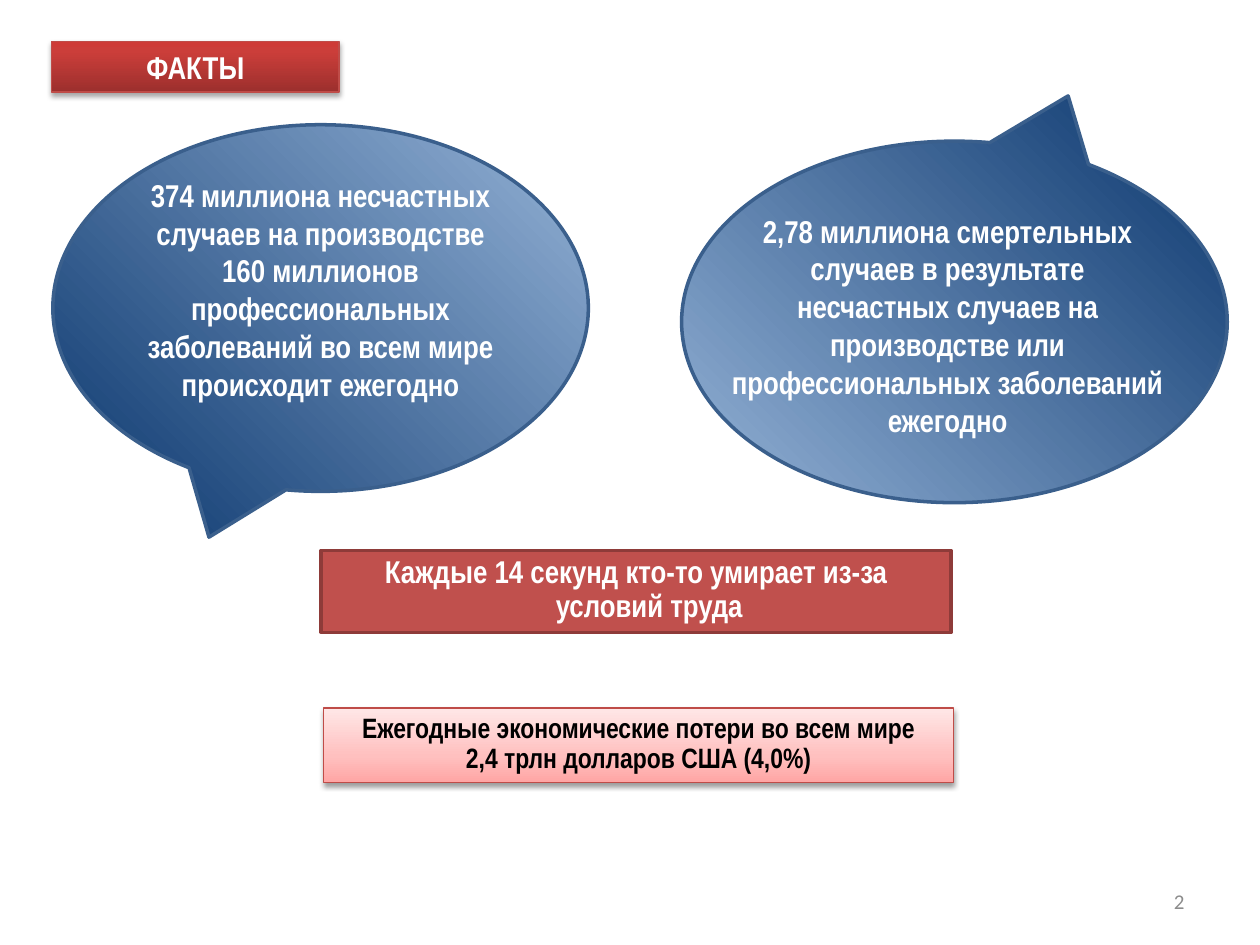
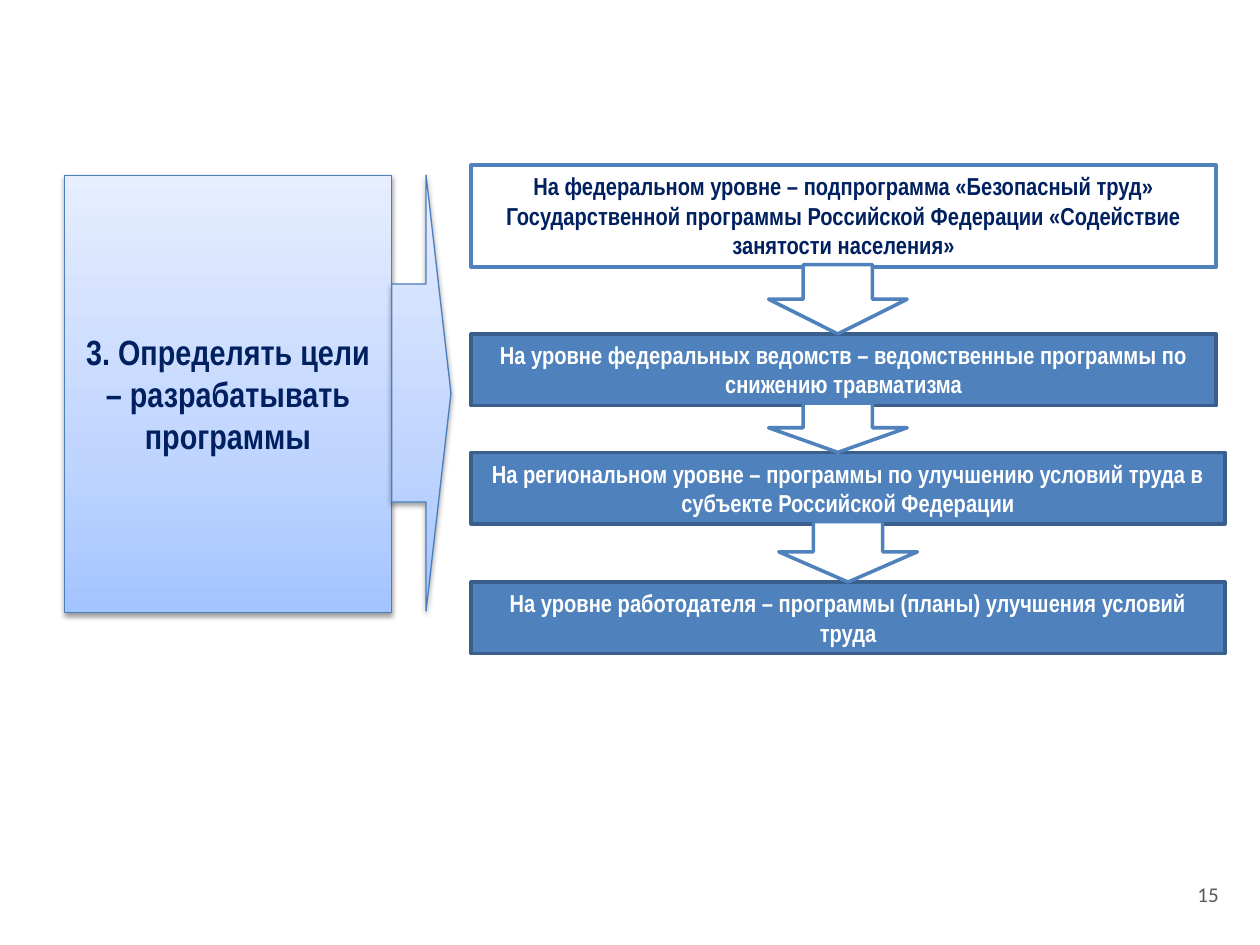
from lxml.etree import fromstring
from pptx import Presentation
from pptx.dml.color import RGBColor
from pptx.enum.shapes import MSO_SHAPE
from pptx.enum.text import MSO_ANCHOR, MSO_AUTO_SIZE, PP_ALIGN
from pptx.oxml.ns import nsdecls
from pptx.util import Pt

# Shared colours and gradients (stops run from bottom to top)
WHITE, BLACK, NAVY = "FFFFFF", "000000", "002060"
BLUE, BLUE_EDGE, PANEL_EDGE = "4F81BD", "3A5F8C", "4B7EBC"
RED, RED_EDGE, RED_RIM = "C0504D", "8E3B39", "BF4C48"
RED_GRADIENT = [(0, "9C2F2D"), (80, "CB3E3A"), (100, "CE3B37")]
PINK_GRADIENT = [(0, "FFA6A5"), (35, "FFC0BF"), (100, "FFE7E7")]
PANEL_GRADIENT = [(0, "A4C4FF"), (35, "BFD4FF"), (100, "E6EEFF")]
CALLOUT_GRADIENT = [(0, BLACK), (12, "1F497D"), (100, "95B3D7")]


def paint(shape, fill, edge, width=2, angle=270, shadow=None):
    """Fill with a colour or gradient stops; shadow is (opacity %, distance)."""
    shape.line.color.rgb = RGBColor.from_string(edge)
    shape.line.width = Pt(width)
    shape.shadow.inherit = False
    if isinstance(fill, str):
        shape.fill.solid()
        shape.fill.fore_color.rgb = RGBColor.from_string(fill)
    else:
        stops = "".join(f'<a:gs pos="{pos * 1000}"><a:srgbClr val="{color}"/></a:gs>'
                        for pos, color in fill)
        shape.line._ln.addprevious(fromstring(
            f'<a:gradFill {nsdecls("a")} rotWithShape="1"><a:gsLst>{stops}</a:gsLst>'
            f'<a:lin ang="{angle * 60000}" scaled="0"/></a:gradFill>'))
    if shadow:
        opacity, distance = shadow
        shape.line._ln.getnext().append(fromstring(
            f'<a:outerShdw {nsdecls("a")} blurRad="{Pt(3.1)}" dist="{Pt(distance)}" '
            f'dir="5400000" rotWithShape="0"><a:srgbClr val="{BLACK}">'
            f'<a:alpha val="{opacity * 1000}"/></a:srgbClr></a:outerShdw>'))


def write(shape, text, size, color, anchor=MSO_ANCHOR.TOP, align=PP_ALIGN.CENTER,
          spacing=None, font="Arial Narrow", bold=True):
    frame = shape.text_frame
    frame.text = text
    frame.word_wrap = True
    frame.auto_size = MSO_AUTO_SIZE.NONE
    frame.vertical_anchor = anchor
    for paragraph in frame.paragraphs:
        paragraph.alignment = align
        paragraph.line_spacing = spacing
        for run in paragraph.runs:
            run.font.name = font
            run.font.size = Pt(size)
            run.font.bold = bold
            run.font.color.rgb = RGBColor.from_string(color)


deck = Presentation()
deck.slide_width, deck.slide_height = Pt(720), Pt(540)

# Heading and page number of each slide
pages = [
    ("ФАКТЫ", (29.5, 23.8, 164.2, 28.8), RED_GRADIENT, RED_RIM, (35, 1.8),
     18, WHITE, MSO_ANCHOR.TOP, "2", (516.2, 500.4), "8C8C8C"),
    ("3. Определять цели – разрабатывать программы", (36.7, 100.1, 187.2, 249.8),
     PANEL_GRADIENT, PANEL_EDGE, (38, 1.6),
     20, NAVY, MSO_ANCHOR.MIDDLE, "15", (535.7, 496.8), "595959"),
]
for (title, box, gradient, edge, shadow, size, color, anchor,
     number, corner, number_color) in pages:
    slide = deck.slides.add_slide(deck.slide_layouts[5])
    heading = slide.shapes.title
    heading.left, heading.top, heading.width, heading.height = map(Pt, box)
    paint(heading, gradient, edge, 0.75, shadow=shadow)
    write(heading, title, size, color, anchor)
    page_number = slide.shapes.add_textbox(*map(Pt, corner), Pt(167.8), Pt(28.8))
    write(page_number, number, 12, number_color, MSO_ANCHOR.MIDDLE, PP_ALIGN.RIGHT,
          font="Calibri", bold=False)
facts, programs = (slide.shapes for slide in deck.slides)

# Facts: two speech bubbles
accidents = facts.add_shape(MSO_SHAPE.OVAL_CALLOUT, Pt(30.2), Pt(71.3), Pt(306), Pt(209.5))
deaths = facts.add_shape(MSO_SHAPE.OVAL_CALLOUT, Pt(389.5), Pt(80.6), Pt(311.8), Pt(206.6))
deaths.rotation = 180
for bubble in (accidents, deaths):
    paint(bubble, CALLOUT_GRADIENT, BLUE_EDGE, angle=315)
write(accidents, "374 миллиона несчастных случаев на производстве\n"
      "160 миллионов профессиональных заболеваний во всем мире происходит ежегодно",
      18, WHITE, MSO_ANCHOR.MIDDLE)
accidents.text_frame.margin_bottom = Pt(25.2)
deaths_text = facts.add_textbox(Pt(411), Pt(117.4), Pt(261), Pt(159.8))
write(deaths_text, "2,78 миллиона смертельных случаев в результате несчастных случаев на "
      "производстве или профессиональных заболеваний ежегодно", 18, WHITE)

# Facts: death rate and economic losses
death_rate = facts.add_shape(MSO_SHAPE.RECTANGLE, Pt(183.6), Pt(314.6), Pt(360), Pt(46.8))
paint(death_rate, RED, RED_EDGE)
write(death_rate, "Каждые 14 секунд кто-то умирает из-за условий труда", 18, WHITE, spacing=0.9)
hanging = death_rate.text_frame.paragraphs[0]._p.get_or_add_pPr()
hanging.set("marL", str(Pt(15)))
hanging.set("indent", str(-Pt(15)))

losses = facts.add_shape(MSO_SHAPE.RECTANGLE, Pt(185), Pt(404.6), Pt(360), Pt(42.5))
paint(losses, PINK_GRADIENT, RED_RIM, 0.75, shadow=(38, 1.6))
write(losses, "Ежегодные экономические потери во всем мире\n2,4 трлн долларов США (4,0%)",
      16, BLACK, spacing=0.9)

# Programs: arrow from the heading panel to the levels
pointer = programs.add_shape(MSO_SHAPE.RIGHT_ARROW, Pt(223.9), Pt(100.1), Pt(33.8), Pt(249.1))
pointer.adjustments[1] = 0.42
paint(pointer, PANEL_GRADIENT, PANEL_EDGE, 0.75, shadow=(38, 1.6))

# Programs: levels from federal to employer
levels = [
    (94.3, 425.5, 58.3, WHITE, BLUE, NAVY,
     "На федеральном уровне – подпрограмма «Безопасный труд» Государственной программы "
     "Российской Федерации «Содействие занятости населения»"),
    (190.8, 425.5, 41, BLUE, BLUE_EDGE, WHITE,
     "На уровне федеральных ведомств – ведомственные программы по снижению травматизма"),
    (258.5, 430.6, 41, BLUE, BLUE_EDGE, WHITE,
     "На региональном уровне – программы по улучшению условий труда в субъекте "
     "Российской Федерации"),
    (332.6, 430.6, 41, BLUE, BLUE_EDGE, WHITE,
     "На уровне работодателя – программы (планы) улучшения условий труда"),
]
for top, width, height, fill, edge, color, text in levels:
    level = programs.add_shape(MSO_SHAPE.RECTANGLE, Pt(269.3), Pt(top), Pt(width), Pt(height))
    paint(level, fill, edge)
    write(level, text, 14, color)

# Programs: each arrow covers the lower edge of its level and ends at the next one
arrow_lefts = (439.2, 439.2, 445)
for left, upper, lower in zip(arrow_lefts, levels, levels[1:]):
    start = upper[0] + upper[2] - 1.4
    step = programs.add_shape(MSO_SHAPE.DOWN_ARROW, Pt(left), Pt(start),
                              Pt(79.2), Pt(lower[0] - start))
    paint(step, WHITE, BLUE)

deck.save("out.pptx")
